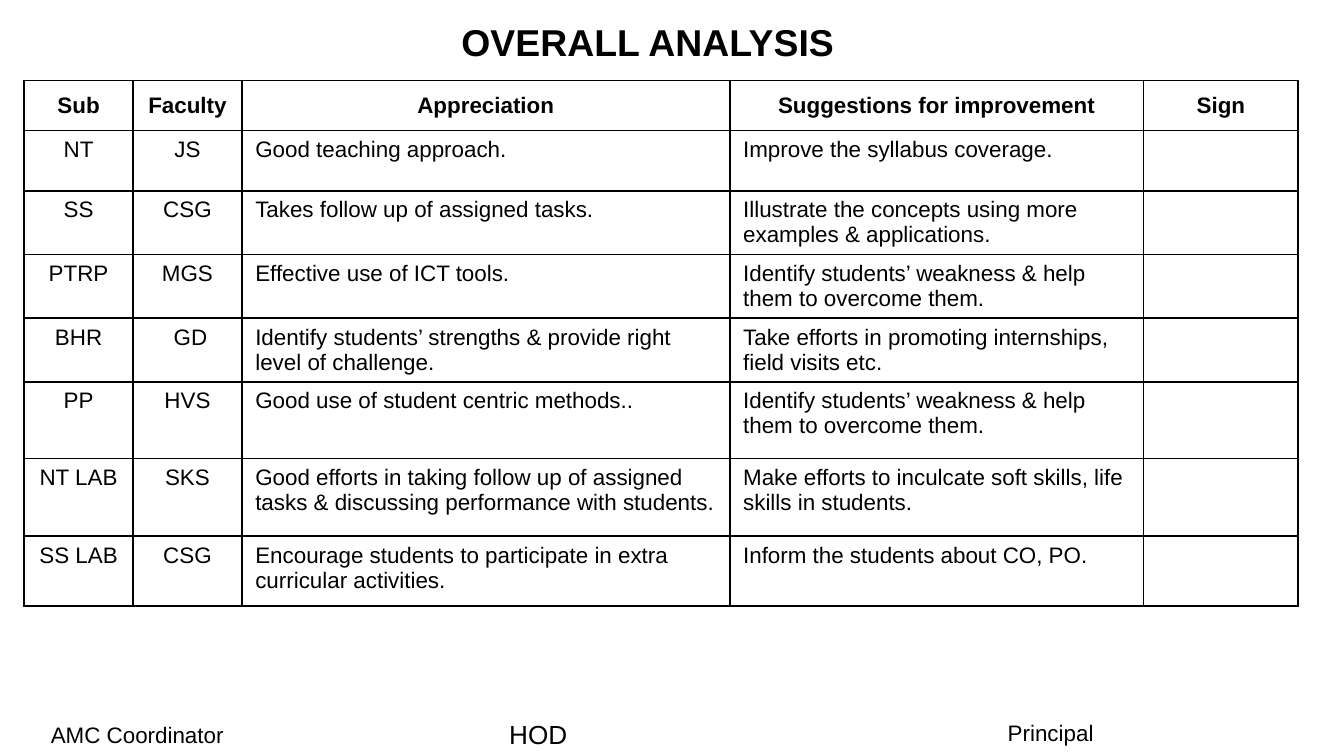
from dataclasses import dataclass

from lxml import etree
from pptx import Presentation
from pptx import util as u
from pptx.dml.color import RGBColor
from pptx.enum import text
from pptx.oxml.ns import qn

EMU_PER_PX = 4572  # 200 px to the inch
BLACK = "000000"
FONT = "Arial"


@dataclass(frozen=True)
class Review:
    subject: str
    faculty: str
    appreciation: str
    suggestion: str
    height: int
    sign: str = ""

    def texts(self) -> list[str]:
        return [self.subject, self.faculty, self.appreciation, self.suggestion, self.sign]


@dataclass(frozen=True)
class Signatory:
    role: str
    left: int
    top: int
    width: int
    height: int
    size: int = 12


WEAKNESS = "Identify students’ weakness & help them to overcome them."
HEADER = Review("Sub", "Faculty", "Appreciation", "Suggestions for improvement", 74, "Sign")
REVIEWS = [
    Review("NT", "JS", "Good teaching approach.", "Improve the syllabus coverage.", 90),
    Review("SS", "CSG", "Takes follow up of assigned tasks.",
           "Illustrate the concepts using more examples & applications.", 90),
    Review("PTRP", "MGS", "Effective use of ICT tools.", WEAKNESS, 90),
    Review("BHR", " GD", "Identify students’ strengths & provide right level of challenge.",
           "Take efforts in promoting internships, field visits etc.", 90),
    Review("PP", "HVS", "Good use of student centric methods..", WEAKNESS, 114),
    Review("NT LAB", "SKS",
           "Good efforts in taking follow up of assigned tasks & discussing performance with students.",
           "Make efforts to inculcate soft skills, life skills in students.", 116),
    Review("SS LAB", "CSG", "Encourage students to participate in extra curricular activities.",
           "Inform the students about CO, PO.", 104),
]
COLUMN_WIDTHS = [162, 162, 726, 616, 230]
CENTRED_COLUMNS = 2
SIGNATORIES = [
    Signatory("AMC Coordinator", 56, 1064, 386, 60),
    Signatory("HOD", 738, 1060, 250, 68, 14),
    Signatory("Principal", 1480, 1060, 328, 60),
]


def px(length: int) -> u.Emu:
    return u.Emu(length * EMU_PER_PX)


def colour(value: str) -> RGBColor:
    return RGBColor.from_string(value)


def write(frame, words: str, size: int, bold: bool = False, centred: bool = False) -> None:
    paragraph = frame.paragraphs[0]
    paragraph.alignment = text.PP_ALIGN.CENTER if centred else text.PP_ALIGN.LEFT
    run = paragraph.add_run()
    run.text = words
    for name, value in {"name": FONT, "size": u.Pt(size), "bold": bold}.items():
        setattr(run.font, name, value)
    run.font.color.rgb = colour(BLACK)


def draw_borders(cell, value: str = BLACK) -> None:
    """Insert the four side lines before the cell's fill, as the schema orders them."""
    properties = cell._tc.get_or_add_tcPr()
    for position, side in enumerate(("a:lnL", "a:lnR", "a:lnT", "a:lnB")):
        line = etree.Element(qn(side), w=str(u.Pt(1)))
        fill = etree.SubElement(line, qn("a:solidFill"))
        etree.SubElement(fill, qn("a:srgbClr"), val=value)
        properties.insert(position, line)


def draw_title(slide, words: str) -> None:
    title = slide.shapes.title
    for name, value in {"left": 32, "top": 8, "width": 1864, "height": 80}.items():
        setattr(title, name, px(value))
    frame = title.text_frame
    frame_format = {
        "margin_left": px(20), "margin_right": px(20),
        "margin_top": px(20), "margin_bottom": px(20),
        "vertical_anchor": text.MSO_ANCHOR.TOP,
        "auto_size": text.MSO_AUTO_SIZE.NONE,
        "word_wrap": True,
    }
    for name, value in frame_format.items():
        setattr(frame, name, value)
    write(frame, words, 20, bold=True, centred=True)


def draw_reviews(slide, left: int, top: int) -> None:
    entries = [HEADER, *REVIEWS]
    table = slide.shapes.add_table(
        len(entries), len(COLUMN_WIDTHS), px(left), px(top),
        px(sum(COLUMN_WIDTHS)), px(sum(entry.height for entry in entries))).table
    table.first_row = table.horz_banding = False
    for column, width in zip(table.columns, COLUMN_WIDTHS):
        column.width = px(width)
    for row, entry in zip(table.rows, entries):
        row.height = px(entry.height)
        is_header = entry is HEADER
        for index, (cell, words) in enumerate(zip(row.cells, entry.texts())):
            cell.fill.background()
            draw_borders(cell)
            cell.vertical_anchor = text.MSO_ANCHOR.MIDDLE if is_header else text.MSO_ANCHOR.TOP
            if words:
                write(cell.text_frame, words, 12, bold=is_header,
                      centred=is_header or index < CENTRED_COLUMNS)


def draw_signatory(slide, signatory: Signatory) -> None:
    box = slide.shapes.add_textbox(px(signatory.left), px(signatory.top),
                                   px(signatory.width), px(signatory.height))
    box.text_frame.word_wrap = True
    box.text_frame.auto_size = text.MSO_AUTO_SIZE.SHAPE_TO_FIT_TEXT
    write(box.text_frame, signatory.role, signatory.size)


def main() -> None:
    deck = Presentation()
    deck.slide_width, deck.slide_height = px(2000), px(1125)
    slide = deck.slides.add_slide(deck.slide_layouts[5])
    draw_title(slide, "OVERALL ANALYSIS")
    draw_reviews(slide, 36, 120)
    for signatory in SIGNATORIES:
        draw_signatory(slide, signatory)
    deck.save("out.pptx")


if __name__ == "__main__":
    main()
